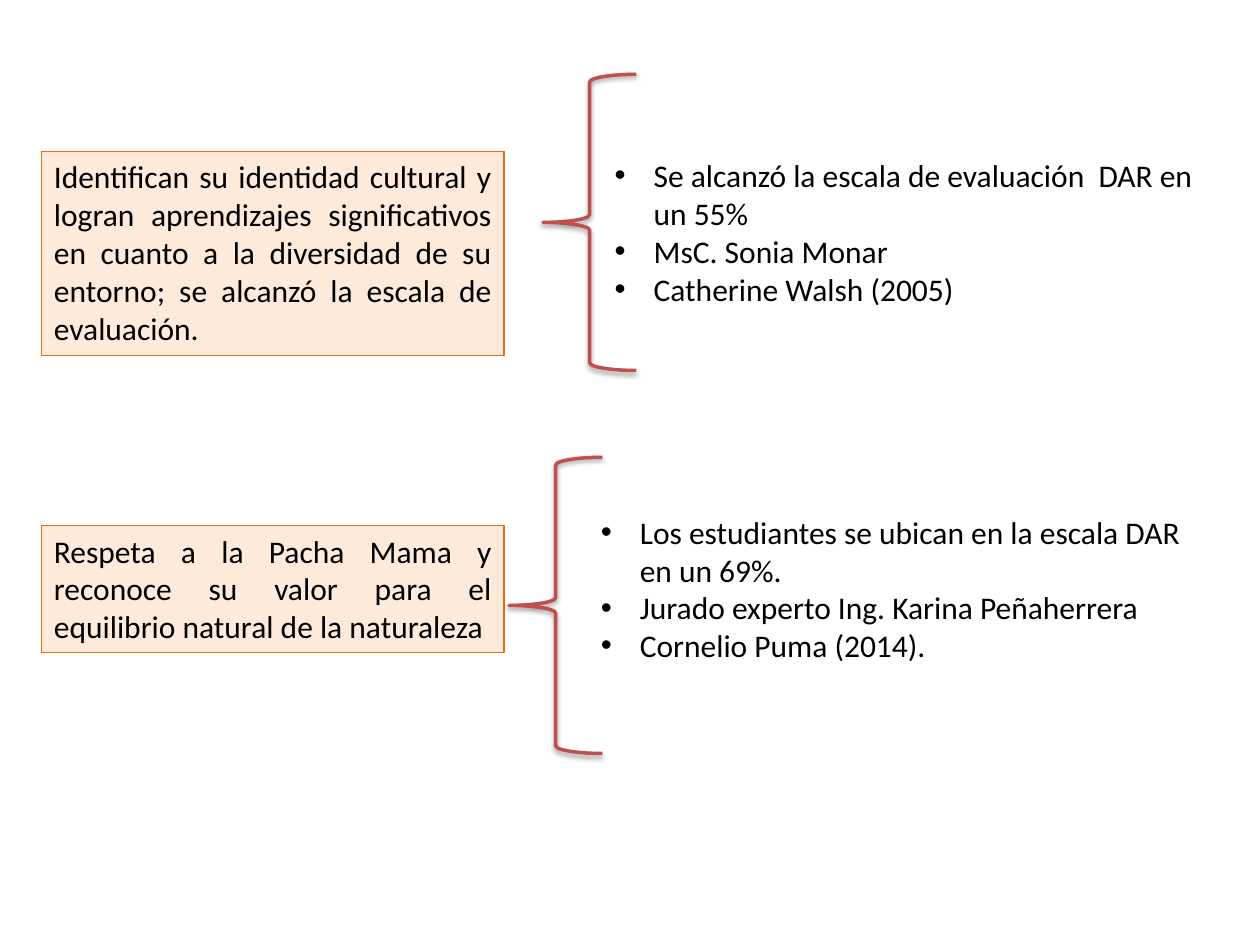
from dataclasses import dataclass

from lxml import etree
from pptx import Presentation
from pptx import util as u
from pptx.dml.color import RGBColor
from pptx.enum import shapes, text
from pptx.oxml.ns import qn


@dataclass(frozen=True)
class Theme:
    font: str = "Calibri"
    size: int = 18
    ink: str = "000000"
    statement_fill: str = "FDEADA"
    statement_line: str = "E46C0A"
    brace_line: str = "C0504D"


THEME = Theme()
BRACE_SIZE = (0.74, 2.35)

GROUPS = [
    {
        "statement": "Identifican su identidad cultural y logran aprendizajes significativos "
        "en cuanto a la diversidad de su entorno; se alcanzó la escala de evaluación.",
        "statement_box": (0.33, 1.2, 3.67, 1.62),
        "brace_box": (4.31, 0.59, *BRACE_SIZE),
        "findings": [
            "Se alcanzó la escala de evaluación  DAR en un 55%",
            "MsC. Sonia Monar",
            "Catherine Walsh (2005)",
        ],
        "findings_box": (4.78, 1.19, 5.04, 1.31),
    },
    {
        "statement": "Respeta a la Pacha Mama y reconoce su valor para el equilibrio "
        "natural de la naturaleza",
        "statement_box": (0.33, 4.17, 3.67, 1.01),
        "brace_box": (4.04, 3.63, *BRACE_SIZE),
        "findings": [
            "Los estudiantes se ubican en la escala DAR en un 69%.",
            "Jurado experto Ing. Karina Peñaherrera",
            "Cornelio Puma (2014).",
        ],
        "findings_box": (4.67, 4.02, 5, 1.31),
    },
]


def to_inches(box):
    return [u.Inches(length) for length in box]


def style_runs(paragraph):
    for run in paragraph.runs:
        run.font.name = THEME.font
        run.font.size = u.Pt(THEME.size)
        run.font.color.rgb = RGBColor.from_string(THEME.ink)


def add_bullet(paragraph):
    properties = paragraph._p.get_or_add_pPr()
    properties.set("marL", str(u.Inches(0.31)))
    properties.set("indent", str(u.Inches(-0.31)))
    etree.SubElement(properties, qn("a:buFont"), typeface="Arial")
    etree.SubElement(properties, qn("a:buChar"), char="•")


def add_soft_shadow(shape):
    shape.shadow.inherit = False
    effects = shape._element.spPr.find(qn("a:effectLst"))
    shadow = etree.SubElement(
        effects, qn("a:outerShdw"), blurRad=str(u.Pt(3.1)), dist=str(u.Pt(1.6)),
        dir="5400000", rotWithShape="0",
    )
    color = etree.SubElement(shadow, qn("a:srgbClr"), val=THEME.ink)
    etree.SubElement(color, qn("a:alpha"), val="38000")


def add_statement(slide, box, wording):
    shape = slide.shapes.add_shape(shapes.MSO_SHAPE.RECTANGLE, *to_inches(box))
    shape.shadow.inherit = False
    shape.fill.solid()
    shape.fill.fore_color.rgb = RGBColor.from_string(THEME.statement_fill)
    shape.line.color.rgb = RGBColor.from_string(THEME.statement_line)
    shape.line.width = u.Pt(0.75)
    frame = shape.text_frame
    frame.word_wrap = True
    frame.vertical_anchor = text.MSO_ANCHOR.TOP
    frame.text = wording
    paragraph = frame.paragraphs[0]
    paragraph.alignment = text.PP_ALIGN.JUSTIFY
    style_runs(paragraph)


def add_findings(slide, box, findings):
    frame = slide.shapes.add_textbox(*to_inches(box)).text_frame
    frame.word_wrap = True
    frame.text = "\n".join(findings)
    for paragraph in frame.paragraphs:
        add_bullet(paragraph)
        style_runs(paragraph)


def add_brace(slide, box):
    shape = slide.shapes.add_shape(shapes.MSO_SHAPE.LEFT_BRACE, *to_inches(box))
    shape.fill.background()
    shape.line.color.rgb = RGBColor.from_string(THEME.brace_line)
    shape.line.width = u.Pt(2)
    add_soft_shadow(shape)


def main():
    presentation = Presentation()
    presentation.slide_width = u.Inches(10)
    presentation.slide_height = u.Inches(7.5)
    slide = presentation.slides.add_slide(presentation.slide_layouts[6])
    for group in GROUPS:
        add_statement(slide, group["statement_box"], group["statement"])
        add_findings(slide, group["findings_box"], group["findings"])
        add_brace(slide, group["brace_box"])
    presentation.save("out.pptx")


if __name__ == "__main__":
    main()
